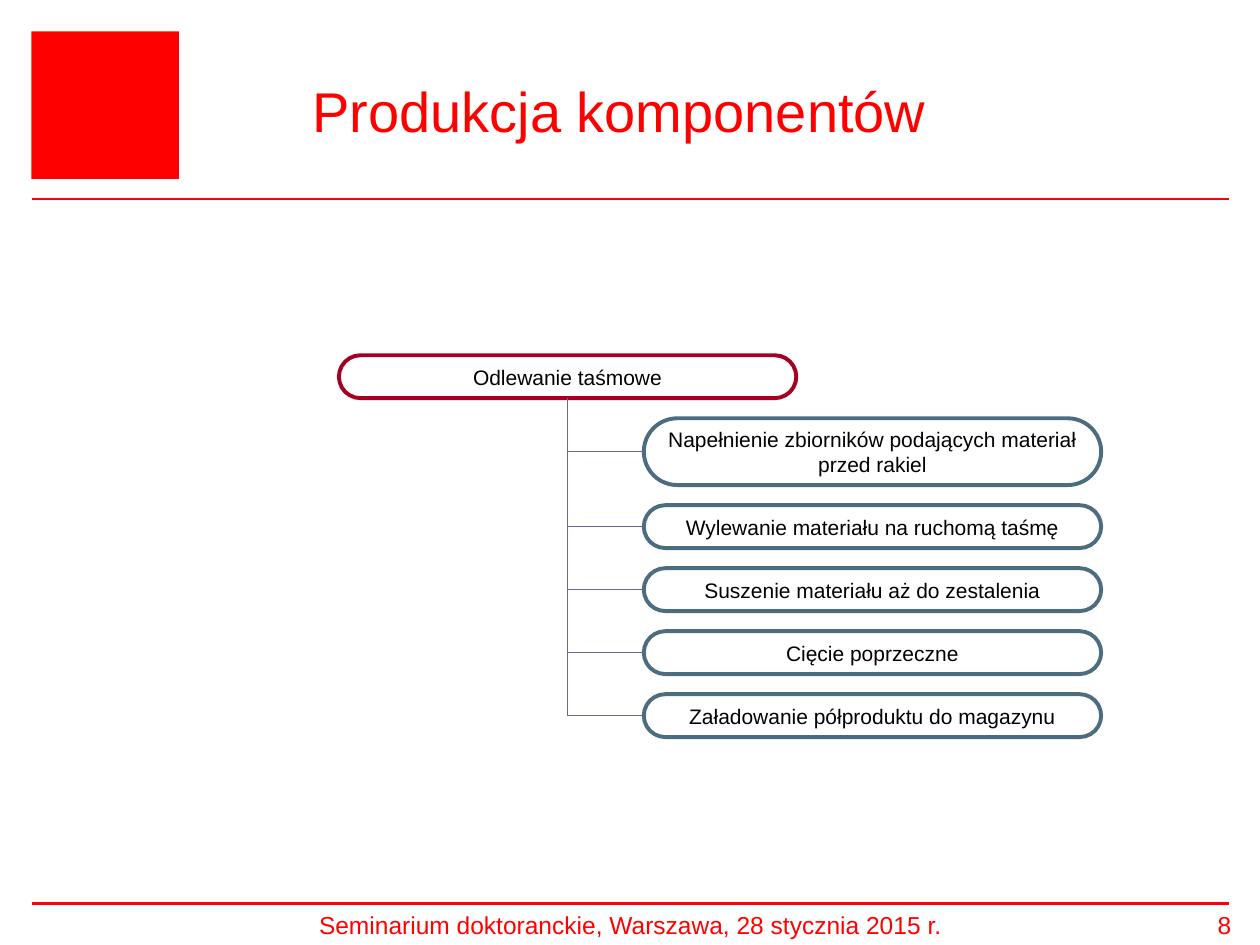
from lxml import etree
from pptx import Presentation
from pptx.dml.color import RGBColor
from pptx.enum import shapes as sh, text as tx
from pptx.oxml import ns
from pptx.util import Inches, Pt

COLORS = {"red": "FF0000", "parent": "A50021", "step": "4C6D80",
          "link": "666699", "black": "000000"}
FONT = "Arial"

deck = Presentation()
deck.slide_width, deck.slide_height = Inches(10), Inches(7.5)
slide = deck.slides.add_slide(deck.slide_layouts[6])


def write(box, words, size, color, align, anchor):
    frame = box.text_frame
    frame.word_wrap = True
    frame.vertical_anchor = anchor
    frame.text = words
    para = frame.paragraphs[0]
    para.alignment = align
    font = para.runs[0].font
    font.name, font.size = FONT, Pt(size)
    font.color.rgb = RGBColor.from_string(COLORS[color])


def add_line(kind, start, end, color, width):
    line = slide.shapes.add_connector(kind, *map(Inches, start + end))
    line.line.color.rgb = RGBColor.from_string(COLORS[color])
    line.line.width = Pt(width)
    etree.SubElement(line._element.spPr, ns.qn("a:effectLst"))
    return line


# Header and footer
for y in (1.58, 7.17):
    add_line(sh.MSO_CONNECTOR.STRAIGHT, (0.25, y), (9.75, y), "red", 1.5)

emblem = slide.shapes.add_shape(sh.MSO_SHAPE.RECTANGLE, Inches(0.25), Inches(0.25),
                                Inches(1.17), Inches(1.17))
emblem.shadow.inherit = False
emblem.fill.solid()
emblem.fill.fore_color.rgb = RGBColor.from_string(COLORS["red"])
emblem.line.fill.background()

CENTER, RIGHT = tx.PP_ALIGN.CENTER, tx.PP_ALIGN.RIGHT
TOP, MIDDLE = tx.MSO_ANCHOR.TOP, tx.MSO_ANCHOR.MIDDLE
for place, words, size, align, anchor in (
    ((1.69, 0.25, 6.45, 1.25), "Produkcja komponentów", 32, CENTER, MIDDLE),
    ((1.27, 7.17, 7.47, 0.33),
     "Seminarium doktoranckie, Warszawa, 28 stycznia 2015 r.", 14, CENTER, TOP),
    ((9.42, 7.17, 0.45, 0.34), "8", 14, RIGHT, TOP),
):
    box = slide.shapes.add_textbox(*map(Inches, place))
    write(box, words, size, "red", align, anchor)

# Process tree: the parent pill first, its steps below at equal gaps
pills = []
top, gap = 2.82, 0.16
for words, left, height, color in (
    ("Odlewanie taśmowe", 2.69, 0.34, "parent"),
    ("Napełnienie zbiorników podających materiał przed rakiel", 5.11, 0.53, "step"),
    ("Wylewanie materiału na ruchomą taśmę", 5.11, 0.34, "step"),
    ("Suszenie materiału aż do zestalenia", 5.11, 0.34, "step"),
    ("Cięcie poprzeczne", 5.11, 0.34, "step"),
    ("Załadowanie półproduktu do magazynu", 5.11, 0.34, "step"),
):
    pill = slide.shapes.add_shape(sh.MSO_SHAPE.ROUNDED_RECTANGLE, Inches(left), Inches(top),
                                  Inches(3.63), Inches(height))
    pill.adjustments[0] = 0.5
    pill.shadow.inherit = False
    pill.fill.background()
    pill.line.color.rgb = RGBColor.from_string(COLORS[color])
    pill.line.width = Pt(2.25)
    frame = pill.text_frame
    frame.margin_left = frame.margin_right = frame.margin_top = frame.margin_bottom = 0
    write(pill, words, 12, "black", CENTER, MIDDLE)
    pills.append(pill)
    top += height + gap

parent, *steps = pills
for step in steps:
    middle = (step.top + step.height / 2) / Inches(1)
    link = add_line(sh.MSO_CONNECTOR.ELBOW, (5.11, middle), (4.5, 3.16), "link", 0.75)
    # A single bend: left from the step, then up to the parent
    link._element.spPr.find(ns.qn("a:prstGeom")).set("prst", "bentConnector2")
    link.begin_connect(step, 1)
    link.end_connect(parent, 2)

deck.save("out.pptx")
